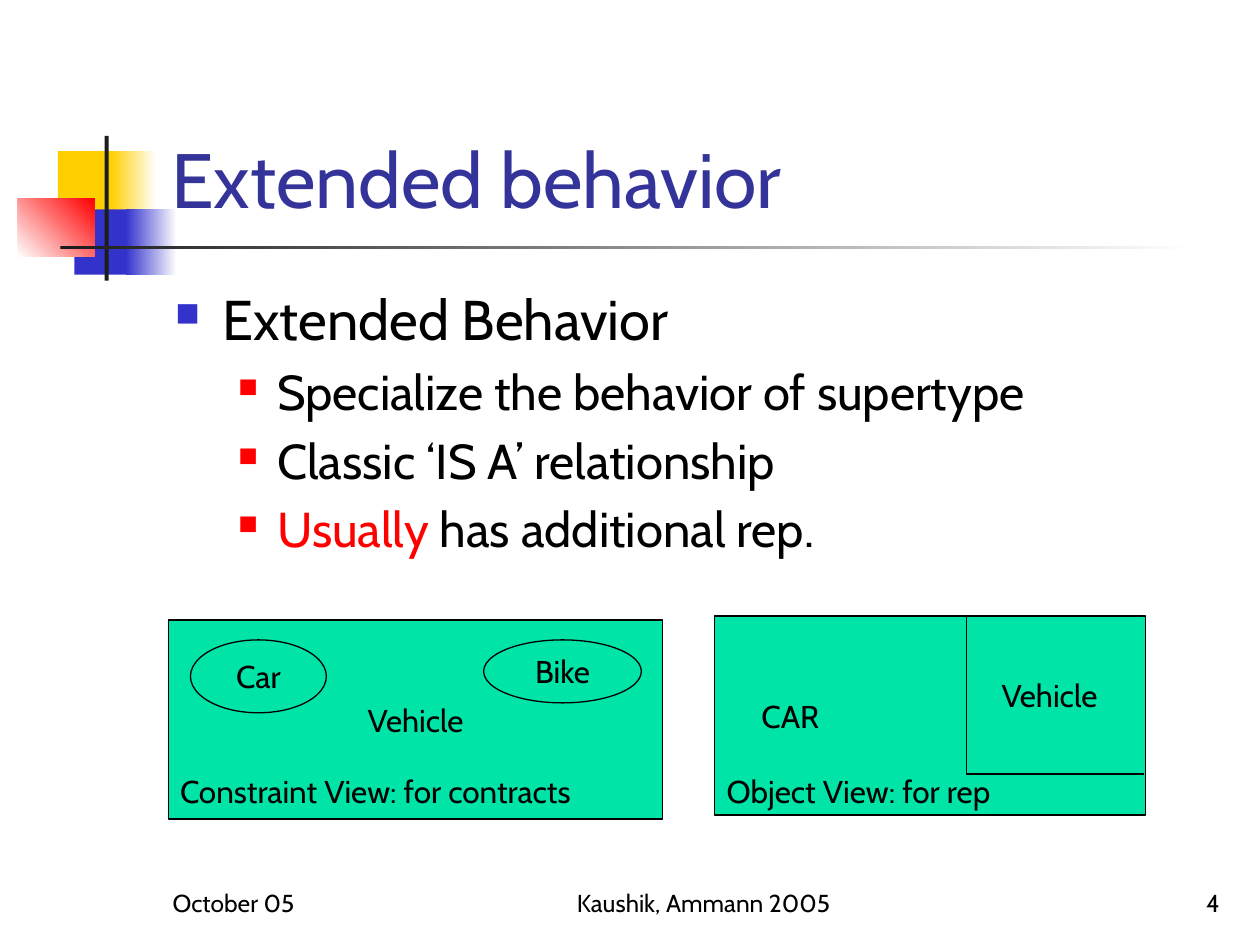
from dataclasses import dataclass

import pptx
import pptx.dml.color
import pptx.enum.shapes
import pptx.enum.text
import pptx.oxml
import pptx.oxml.ns
import pptx.util

Cm = pptx.util.Cm
Align = pptx.enum.text.PP_ALIGN
Anchor = pptx.enum.text.MSO_ANCHOR
Kind = pptx.enum.shapes.MSO_SHAPE


@dataclass(frozen=True)
class Theme:
    """Hold the colours and type sizes."""
    font: str = "Cabin"
    ink: str = "000000"
    paper: str = "FFFFFF"
    heading: str = "333399"
    yellow: str = "FFCF01"
    blue: str = "3333CC"
    red: str = "FF0000"
    bar: str = "1C1C1C"
    panel: str = "00E4A8"
    title: int = 44
    point: int = 32
    detail: int = 28
    label: int = 18
    footer: int = 14
    line: float = 0.75


THEME = Theme()


def rgb(value):
    """Turn a hex string into a colour."""
    return pptx.dml.color.RGBColor.from_string(value)


def write(para, text, size=THEME.label, color=THEME.ink, align=Align.LEFT):
    """Add a formatted span of text to a paragraph."""
    para.alignment = align
    span = para.add_run()
    span.text = text
    span.font.name = THEME.font
    span.font.size = pptx.util.Pt(size)
    span.font.color.rgb = rgb(color)


def add_bullet(para, color, percent, left, hanging):
    """Give a paragraph a square bullet and a hanging indent."""
    props = para._p.get_or_add_pPr()
    props.set("marL", str(Cm(left)))
    props.set("indent", str(-Cm(hanging)))
    space = pptx.oxml.ns.nsdecls("a")
    for markup in (
        f'<a:buClr {space}><a:srgbClr val="{color}"/></a:buClr>',
        f'<a:buSzPct {space} val="{percent * 1000}"/>',
        f'<a:buChar {space} char="■"/>',
    ):
        props.append(pptx.oxml.parse_xml(markup))


class SlideBuilder:
    """Draw styled elements on the current slide."""

    def __init__(self, page, theme):
        """Keep the slide and its style."""
        self.page = page
        self.theme = theme

    def title(self, text, area):
        """Place the title in front of what is drawn so far."""
        box = self.page.shapes.title
        box.left, box.top, box.width, box.height = map(Cm, area)
        box.element.getparent().append(box.element)
        frame = box.text_frame
        frame.auto_size = pptx.enum.text.MSO_AUTO_SIZE.NONE
        frame.vertical_anchor = Anchor.BOTTOM
        write(frame.paragraphs[0], text, size=self.theme.title, color=self.theme.heading)

    def text(self, text, area, anchor=Anchor.TOP, wrap=False, **style):
        """Place a single-paragraph text box."""
        frame = self.page.shapes.add_textbox(*map(Cm, area)).text_frame
        frame.word_wrap = wrap
        frame.vertical_anchor = anchor
        write(frame.paragraphs[0], text, **style)

    def bullets(self, items, area):
        """Place a two-level list; each item is a level and its spans."""
        theme = self.theme
        levels = (
            (theme.point, theme.blue, 60, 0.95, 0.95),
            (theme.detail, theme.red, 55, 2.06, 0.79),
        )
        frame = self.page.shapes.add_textbox(*map(Cm, area)).text_frame
        frame.word_wrap = True
        for index, (level, spans) in enumerate(items):
            para = frame.add_paragraph() if index else frame.paragraphs[0]
            size, *bullet = levels[level]
            para.level = level
            para.space_before = pptx.util.Pt(size * 0.2)
            add_bullet(para, *bullet)
            for text, color in spans:
                write(para, text, size=size, color=color)

    def block(self, area, start, end=None, angle=0):
        """Draw an unlined rectangle, plain or fading to a second colour."""
        box = self.page.shapes.add_shape(Kind.RECTANGLE, *map(Cm, area))
        box.shadow.inherit = False
        box.line.fill.background()
        if end is None:
            box.fill.solid()
            box.fill.fore_color.rgb = rgb(start)
            return
        box.fill.gradient()
        box.fill.gradient_angle = angle
        for stop, color in zip(box.fill.gradient_stops, (start, end)):
            stop.color.rgb = rgb(color)

    def panel(self, text, area, kind=Kind.RECTANGLE, inset=None):
        """Draw an outlined shape, its label centred or inset from the left."""
        box = self.page.shapes.add_shape(kind, *map(Cm, area))
        box.shadow.inherit = False
        box.fill.solid()
        box.fill.fore_color.rgb = rgb(self.theme.panel)
        box.line.color.rgb = rgb(self.theme.ink)
        box.line.width = pptx.util.Pt(self.theme.line)
        frame = box.text_frame
        frame.vertical_anchor = Anchor.MIDDLE
        frame.word_wrap = inset is not None
        if inset is not None:
            frame.margin_left = Cm(inset)
        align = Align.CENTER if inset is None else Align.LEFT
        write(frame.paragraphs[0], text, align=align)
        return box

    def line(self, start, end):
        """Draw a thin straight line."""
        points = map(Cm, (*start, *end))
        line = self.page.shapes.add_connector(
            pptx.enum.shapes.MSO_CONNECTOR.STRAIGHT, *points)
        line.line.color.rgb = rgb(self.theme.ink)
        line.line.width = pptx.util.Pt(self.theme.line)
        effects = f'<a:effectLst {pptx.oxml.ns.nsdecls("a")}/>'
        line.element.spPr.append(pptx.oxml.parse_xml(effects))


def main():
    """Build and save the slide."""
    deck = pptx.Presentation()
    deck.slide_width, deck.slide_height = Cm(25.4), Cm(19.05)
    page = deck.slides.add_slide(deck.slide_layouts.get_by_name("Title Only"))
    theme = THEME
    builder = SlideBuilder(page, theme)

    builder.block((1.17, 3.05, 1.22, 1.32), theme.yellow)
    builder.block((2.24, 3.05, 0.91, 1.32), theme.yellow, theme.paper)
    builder.block((1.5, 4.22, 1.17, 1.32), theme.blue)
    builder.block((2.54, 4.22, 1.02, 1.32), theme.blue, theme.paper)
    builder.block((0.36, 4.01, 1.55, 1.17), theme.paper, theme.red, angle=45)
    builder.block((2.11, 2.74, 0.08, 2.92), theme.bar)
    builder.block((1.22, 4.95, 22.86, 0.08), theme.bar, theme.paper)

    for text, left, width, align in (
        ("October 05", 3.23, 5.28, Align.LEFT),
        ("Kaushik, Ammann 2005", 10.16, 8.05, Align.CENTER),
        ("4", 19.56, 5.28, Align.RIGHT),
    ):
        builder.text(text, (left, 17.35, width, 1.27), anchor=Anchor.BOTTOM,
                     wrap=True, size=theme.footer, align=align)

    builder.title("Extended behavior", (3.2, 0.58, 21.64, 4.06))
    builder.bullets((
        (0, [("Extended Behavior", theme.ink)]),
        (1, [("Specialize the behavior of supertype", theme.ink)]),
        (1, [("Classic ‘IS A’ relationship", theme.ink)]),
        (1, [("Usually", theme.red), (" has additional rep.", theme.ink)]),
    ), (3.28, 5.61, 21.59, 11.43))

    page.shapes.add_group_shape([
        builder.panel("Vehicle", (3.4, 12.5, 9.96, 4.01)),
        builder.panel("Car", (3.84, 12.9, 2.74, 1.47), kind=Kind.OVAL),
        builder.panel("Bike", (9.75, 12.9, 3.18, 1.27), kind=Kind.OVAL),
    ])
    builder.text("Constraint View: for contracts", (3.38, 15.44, 9.04, 1.02))

    builder.panel("CAR", (14.4, 12.42, 8.69, 4.01), inset=0.95)
    builder.text("Object View: for rep", (14.4, 15.44, 6.17, 1.02))
    corner = (19.48, 15.6)
    builder.line((19.48, 12.42), corner)
    builder.line(corner, (23.06, 15.6))
    builder.text("Vehicle", (19.94, 13.51, 2.49, 1.02))

    deck.save("out.pptx")


if __name__ == "__main__":
    main()
